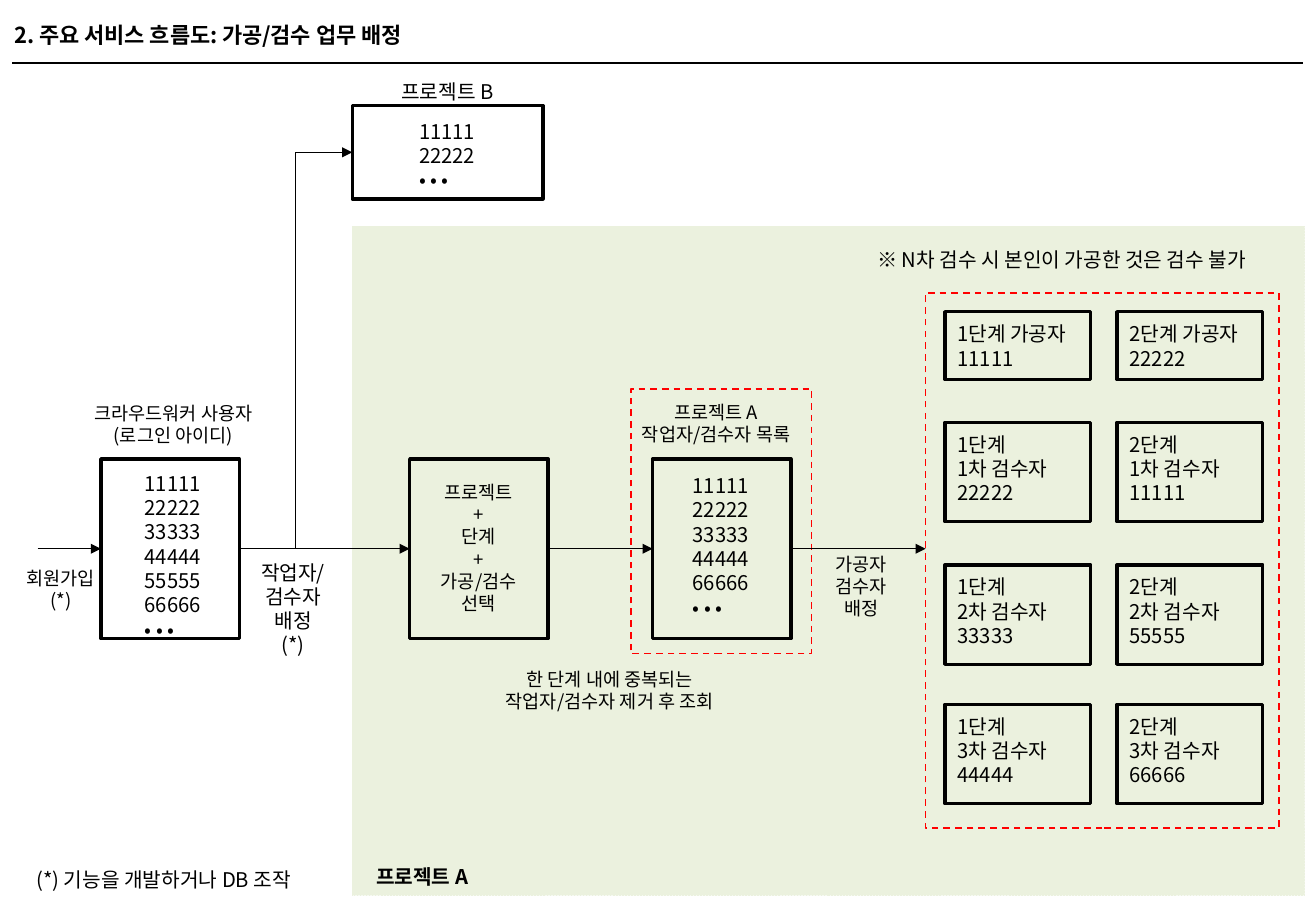
from pptx import Presentation
from pptx.dml.color import RGBColor
from pptx.enum.dml import MSO_LINE
from pptx.enum.shapes import MSO_CONNECTOR as CONNECTOR, MSO_SHAPE as SHAPE
from pptx.enum.text import MSO_ANCHOR as ANCHOR, MSO_AUTO_SIZE as AUTO_SIZE, PP_ALIGN as ALIGN
from pptx.oxml.ns import qn
from pptx.util import Pt
from lxml.etree import SubElement

BLACK = RGBColor(0x00, 0x00, 0x00)
RED = RGBColor(0xFF, 0x00, 0x00)
PALE_GREEN = RGBColor(0xEB, 0xF1, 0xDE)
FONT = "Noto Sans CJK KR"
TOP, LEFT, BOTTOM, RIGHT = range(4)
DOTS = "• • •"


def write(text_frame, text, size, align=ALIGN.LEFT, bold=False):
    text_frame.text = text
    text_frame.vertical_anchor = ANCHOR.TOP
    for paragraph in text_frame.paragraphs:
        paragraph.alignment = align
        paragraph.line_spacing = Pt(size * 1.2)
        for run in paragraph.runs:
            run.font.name = FONT
            run.font.size = Pt(size)
            run.font.bold = bold
            run.font.color.rgb = BLACK
            SubElement(run.font._element, qn("a:ea"), typeface=FONT)


def add_label(slide, box, text, size=11, align=ALIGN.CENTER, bold=False, wrap=False):
    text_frame = slide.shapes.add_textbox(*map(Pt, box)).text_frame
    write(text_frame, text, size, align, bold)
    text_frame.word_wrap = wrap
    text_frame.auto_size = AUTO_SIZE.SHAPE_TO_FIT_TEXT


def add_rectangle(slide, box, color=BLACK, width=2, dashed=False):
    shape = slide.shapes.add_shape(SHAPE.RECTANGLE, *map(Pt, box))
    shape.shadow.inherit = False
    shape.fill.background()
    shape.line.color.rgb = color
    shape.line.width = Pt(width)
    if dashed:
        shape.line.dash_style = MSO_LINE.DASH
    return shape


def add_text_rectangle(slide, box, text, side, top, size=12, align=ALIGN.LEFT):
    """Add an outlined box whose text starts at the side and top insets."""
    shape = add_rectangle(slide, box)
    text_frame = shape.text_frame
    text_frame.margin_left, text_frame.margin_top = Pt(side), Pt(top)
    text_frame.margin_right = Pt(side if align == ALIGN.CENTER else 0)
    text_frame.margin_bottom = Pt(0)
    text_frame.word_wrap = True
    write(text_frame, text, size, align)
    return shape


def add_line(slide, start, end, kind=CONNECTOR.STRAIGHT, arrow=True):
    """Join two ends, each a point or a (shape, side) pair."""
    connector = slide.shapes.add_connector(kind, 0, 0, 0, 0)
    if isinstance(start[0], (int, float)):
        connector.begin_x, connector.begin_y = map(Pt, start)
    else:
        connector.begin_connect(*start)
    if isinstance(end[0], (int, float)):
        connector.end_x, connector.end_y = map(Pt, end)
    else:
        connector.end_connect(*end)
    connector.line.color.rgb = BLACK
    connector.line.width = Pt(0.75)
    if arrow:
        SubElement(connector.line._get_or_add_ln(), qn("a:tailEnd"), type="triangle")
    SubElement(connector._element.spPr, qn("a:effectLst"))


def add_title(slide, left, top, width):
    add_label(slide, (left, top, width, 23), "2. 주요 서비스 흐름도: 가공/검수 업무 배정",
              13, ALIGN.LEFT, bold=True, wrap=True)
    add_line(slide, (left + 6, top + 28), (left + 771, top + 28), arrow=False)


def add_project_panel(slide, left, top, width, height):
    panel = add_rectangle(slide, (left, top, width, height), PALE_GREEN, 0.25, dashed=True)
    panel.fill.solid()
    panel.fill.fore_color.rgb = PALE_GREEN
    add_label(slide, (left + 3.6, top + 375, 75.6, 21.6), "프로젝트 A", 12, bold=True)
    add_label(slide, (left + 304, top + 9.3, 267, 21.6),
              "※ N차 검수 시 본인이 가공한 것은 검수 불가", 12, ALIGN.LEFT, wrap=True)


def add_other_project(slide, left, top, width, height):
    add_label(slide, (left + 19.4, top - 19.4, 74.2, 21.6), "프로젝트 B", 12)
    return add_text_rectangle(slide, (left, top, width, height),
                              f"11111\n22222\n{DOTS}", 39.6, 8)


def add_flow(slide, left, top, width, height):
    """Add the three flow boxes with their captions; return the boxes."""
    users = add_text_rectangle(
        slide, (left, top, width, height),
        f"11111\n22222\n33333\n44444\n55555\n66666\n{DOTS}", 26, 7.2)
    selection = add_text_rectangle(
        slide, (left + 183, top, width, height),
        "프로젝트\v+\n단계\n+\n가공/검수\n선택", 16.6, 13, 11, ALIGN.CENTER)
    members = add_text_rectangle(
        slide, (left + 327, top, width, height),
        f"11111\n22222\n33333\n44444\n66666\n{DOTS}", 23.8, 8.6)
    add_rectangle(slide, (left + 314, top - 41.6, 107.3, 157), RED, 1, dashed=True)

    captions = [
        (-16, -37.3, 118, 34, "크라우드워커 사용자\n(로그인 아이디)", 11),
        (-53.3, 60.6, 59, 34, "회원가입\n(*)", 11),
        (86.2, 56.3, 55.4, 65.5, "작업자/\n검수자\n배정\n(*)", 12),
        (308.9, -38, 111.6, 34, "프로젝트 A\n작업자/검수자 목록", 11),
        (427, 52, 47.5, 47.5, "가공자\n검수자\n배정", 11),
        (225.4, 120.4, 152.6, 34, "한 단계 내에 중복되는\n작업자/검수자 제거 후 조회", 11),
    ]
    for x, y, caption_width, caption_height, text, size in captions:
        add_label(slide, (left + x, top + y, caption_width, caption_height), text, size)
    return users, selection, members


def add_assignments(slide, left, top, width, height):
    """Add the dashed frame and its two columns of stage assignments."""
    add_rectangle(slide, (left, top, width, height), RED, 1, dashed=True)
    rows = [
        (11.3, 40.3, " 가공자", ("11111", "22222")),
        (76.8, 59, "\n1차 검수자", ("22222", "11111")),
        (161.3, 59, "\n2차 검수자", ("33333", "55555")),
        (244, 59, "\n3차 검수자", ("44444", "66666")),
    ]
    for y, row_height, role, workers in rows:
        for column, worker in enumerate(workers):
            add_text_rectangle(
                slide, (left + 11.5 + 102 * column, top + y, 86.4, row_height),
                f"{column + 1}단계{role}\n{worker}", 7.4, 5.8)


def main():
    presentation = Presentation()
    presentation.slide_width, presentation.slide_height = Pt(780), Pt(540)
    slide = presentation.slides.add_slide(presentation.slide_layouts[6])

    add_project_panel(slide, 208.8, 134, 564.5, 396.7)
    add_title(slide, 1.4, 9.4, 757.4)
    other_project = add_other_project(slide, 208.8, 62.6, 113, 55.4)
    users, selection, members = add_flow(slide, 59.8, 272, 82, 106.6)
    add_assignments(slide, 548.6, 173.5, 209.5, 317.5)
    add_label(slide, (14.4, 510.5, 181.4, 21.6), "(*) 기능을 개발하거나 DB 조작", 12, ALIGN.LEFT)

    add_line(slide, (22.3, 325.3), (users, LEFT))
    add_line(slide, (users, RIGHT), (selection, LEFT))
    add_line(slide, (users, RIGHT), (other_project, LEFT), CONNECTOR.ELBOW)
    add_line(slide, (selection, RIGHT), (members, LEFT))
    add_line(slide, (members, RIGHT), (548.6, 325.3))

    presentation.save("out.pptx")


if __name__ == "__main__":
    main()
